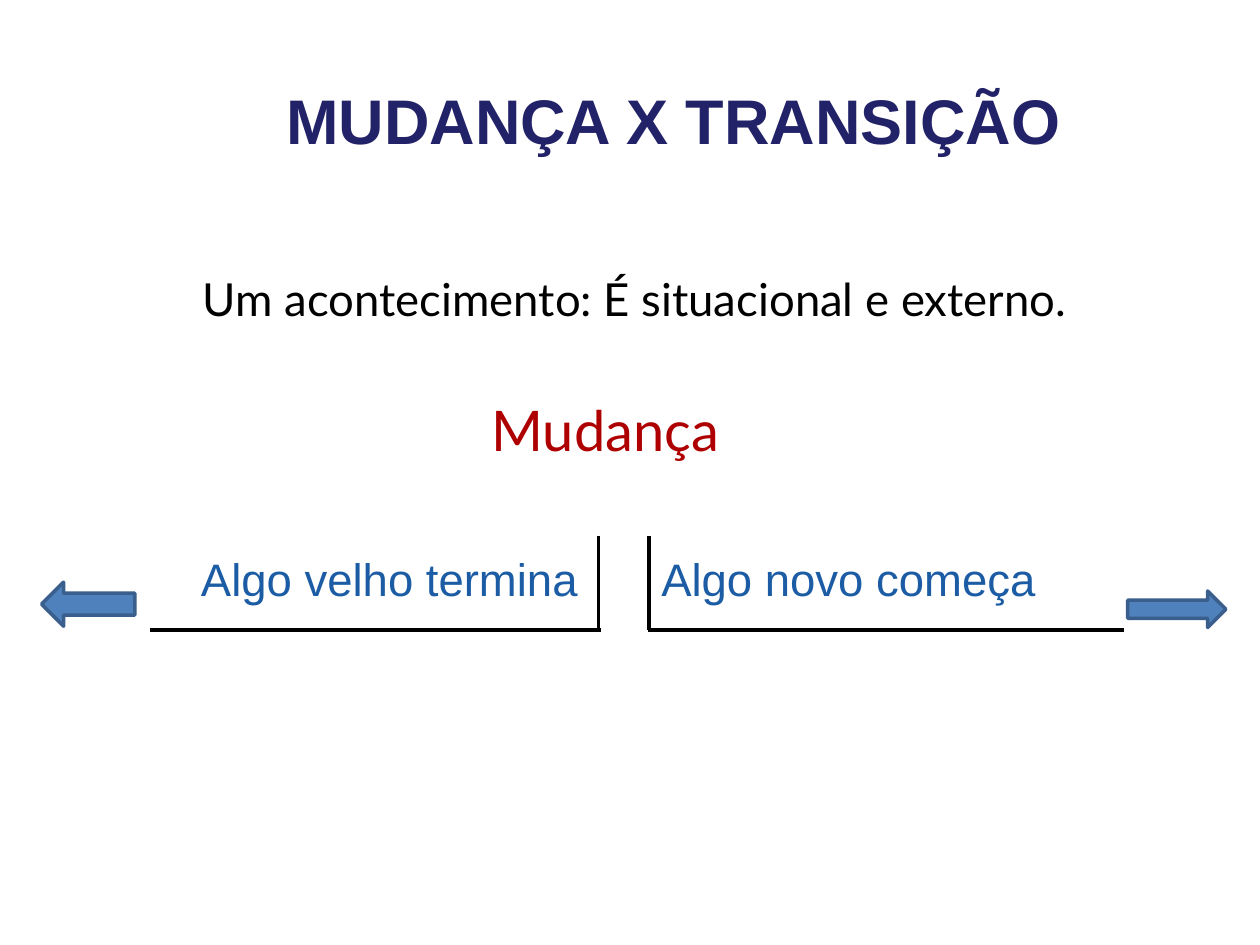
from lxml import etree
from pptx import Presentation
from pptx.dml.color import RGBColor
from pptx.enum.shapes import MSO_CONNECTOR, MSO_SHAPE
from pptx.enum.text import MSO_ANCHOR, PP_ALIGN
from pptx.oxml.ns import qn
from pptx.util import Inches, Pt

COLORS = {
    "title": "222268",
    "body": "000000",
    "change": "AE0000",
    "outcome": "1B5CA5",
    "rule": "000000",
    "arrow": "4F81BD",
    "arrow_edge": "3A5F8C",
}


def rgb(role):
    return RGBColor.from_string(COLORS[role])


def set_attributes(target, values):
    for name, value in values.items():
        setattr(target, name, value)


def write(frame, text, role, size, font="Arial", bold=False,
          align=PP_ALIGN.LEFT, **frame_format):
    set_attributes(frame, {"word_wrap": True, "vertical_anchor": MSO_ANCHOR.TOP,
                           **frame_format})
    paragraph = frame.paragraphs[0]
    paragraph.alignment = align
    run = paragraph.add_run()
    run.text = text
    set_attributes(run.font, {"name": font, "size": Pt(size), "bold": bold})
    run.font.color.rgb = rgb(role)


def add_label(shapes, box, text, role, size, inset=0, **text_format):
    label = shapes.add_textbox(*map(Inches, box))
    write(label.text_frame, text, role, size, margin_left=Inches(inset),
          margin_right=0, margin_top=0, margin_bottom=0, **text_format)


def add_rule(shapes, start, end):
    rule = shapes.add_connector(MSO_CONNECTOR.STRAIGHT,
                                *map(Inches, (*start, *end)))
    rule.line.color.rgb = rgb("rule")
    rule.line.width = Pt(2.25)
    etree.SubElement(rule._element.spPr, qn("a:effectLst"))


def place_title(title, box):
    left, top, width, height = map(Inches, box)
    set_attributes(title, {"left": left, "top": top,
                           "width": width, "height": height})
    write(title.text_frame, "MUDANÇA X TRANSIÇÃO", "title", 36, bold=True,
          align=PP_ALIGN.CENTER)


def add_outcome(slide, box, text, inner_x, outer_x, **text_format):
    """Group a label with an upright rule at its inner side and a rule below."""
    left, top, width, height = box
    bottom = top + height
    group = slide.shapes.add_group_shape()
    add_label(group.shapes, (left, top + 0.12, width, 0.43), text, "outcome",
              26, **text_format)
    add_rule(group.shapes, (inner_x, top), (inner_x, bottom))
    overlap = 0.02 if inner_x > outer_x else -0.01
    add_rule(group.shapes, (inner_x + overlap, bottom), (outer_x, bottom))


def add_arrow(slide, preset, box):
    arrow = slide.shapes.add_shape(preset, *map(Inches, box))
    arrow.shadow.inherit = False
    arrow.fill.solid()
    arrow.fill.fore_color.rgb = rgb("arrow")
    arrow.line.color.rgb = rgb("arrow_edge")
    arrow.line.width = Pt(2)


def build_slide(deck):
    slide = deck.slides.add_slide(deck.slide_layouts[5])
    place_title(slide.shapes.title, (1.54, 0.6, 7.61, 0.71))
    add_label(slide.shapes, (0.67, 2.15, 8.74, 0.43),
              "Um acontecimento: É situacional e externo.", "body", 26,
              font="Lato", align=PP_ALIGN.CENTER,
              vertical_anchor=MSO_ANCHOR.MIDDLE)
    add_label(slide.shapes, (3.9, 3.14, 1.82, 0.53), "Mudança", "change", 32,
              font="Lato", word_wrap=False)
    add_outcome(slide, (0.79, 4.25, 3.8, 0.75), "Algo velho termina",
                inner_x=4.75, outer_x=1.19, align=PP_ALIGN.RIGHT)
    add_outcome(slide, (5.15, 4.25, 4.27, 0.75), "Algo novo começa",
                inner_x=5.15, outer_x=8.92, inset=0.1)
    add_arrow(slide, MSO_SHAPE.RIGHT_ARROW, (8.95, 4.69, 0.78, 0.29))
    add_arrow(slide, MSO_SHAPE.LEFT_ARROW, (0.33, 4.62, 0.74, 0.35))


def main():
    deck = Presentation()
    set_attributes(deck, {"slide_width": Inches(10), "slide_height": Inches(7.5)})
    build_slide(deck)
    deck.save("out.pptx")


if __name__ == "__main__":
    main()
